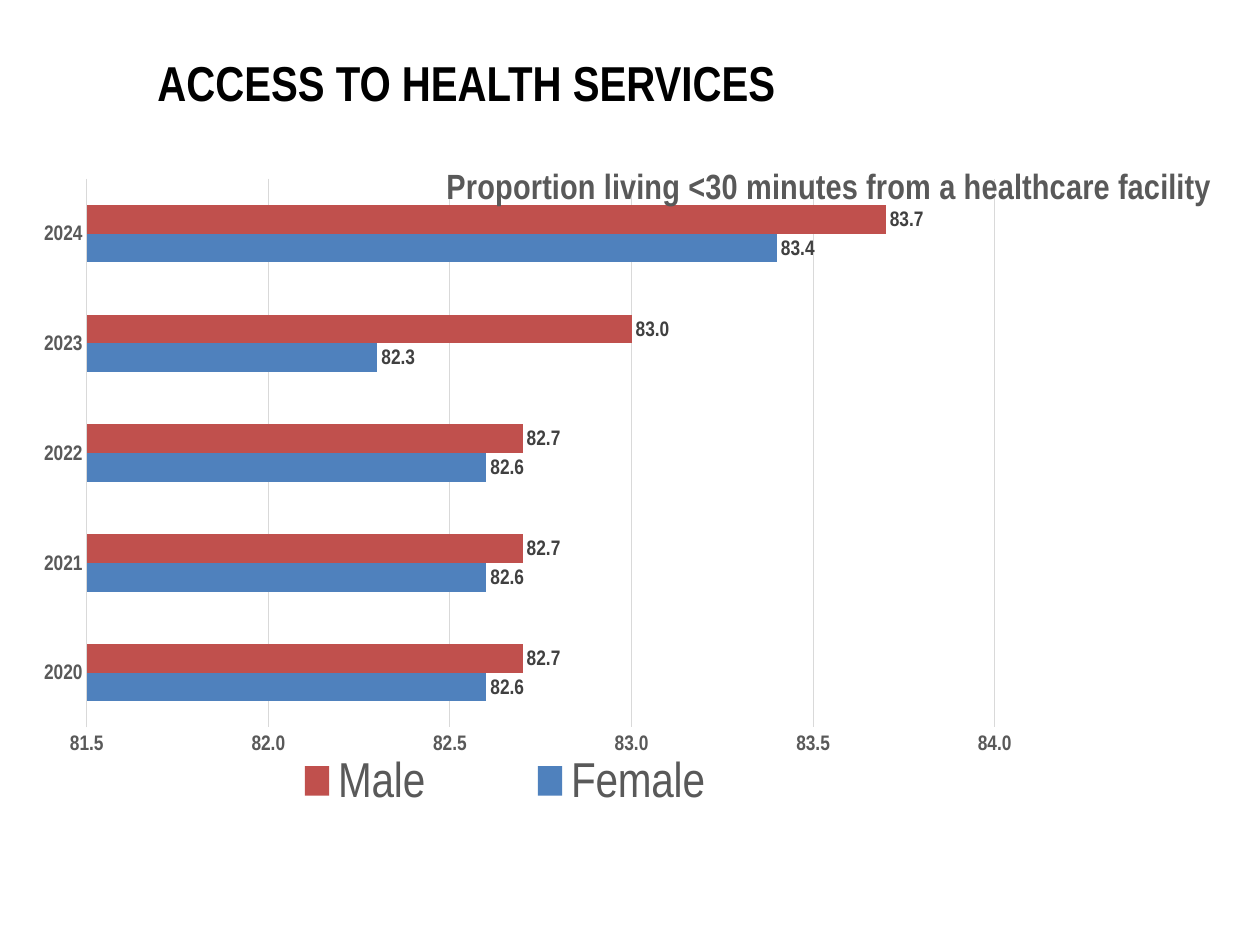
from dataclasses import dataclass

from lxml.etree import SubElement
from pptx import Presentation
from pptx.chart.data import CategoryChartData
from pptx.dml.color import RGBColor
from pptx.enum.chart import XL_CHART_TYPE as ChartType
from pptx.enum.chart import XL_LABEL_POSITION as LabelPosition
from pptx.enum.chart import XL_LEGEND_POSITION as LegendPosition
from pptx.enum.chart import XL_TICK_MARK as TickMark
from pptx.enum.text import MSO_ANCHOR as Anchor
from pptx.oxml.ns import qn
from pptx.util import Pt


@dataclass(frozen=True)
class Theme:
    """Colours, fonts and type sizes of the slide."""

    ink: str = "000000"
    muted: str = "595959"
    label: str = "404040"
    grid: str = "D9D9D9"
    female: str = "4F81BD"
    male: str = "C0504D"
    heading_font: str = "Arial Narrow"
    chart_font: str = "Arial"
    heading_size: int = 28
    chart_title_size: int = 20
    small_size: int = 12


THEME = Theme()
YEARS = ("2020", "2021", "2022", "2023", "2024")
SERIES = {
    "Female": (THEME.female, (82.6, 82.6, 82.6, 82.3, 83.4)),
    "Male": (THEME.male, (82.7, 82.7, 82.7, 83.0, 83.7)),
}


def set_values(target, values):
    """Set each attribute in a dict on the target."""
    for name, value in values.items():
        setattr(target, name, value)


def style_font(font, name, size, color, bold=False):
    """Apply family, size, weight and colour to a font."""
    set_values(font, {"name": name, "size": Pt(size), "bold": bold})
    font.color.rgb = RGBColor.from_string(color)


def set_layout(parent, index, **values):
    """Give a chart part a manual layout at the given child index."""
    for existing in parent.findall(qn("c:layout")):
        parent.remove(existing)
    layout = SubElement(parent, qn("c:layout"))
    parent.insert(index, layout)
    manual = SubElement(layout, qn("c:manualLayout"))
    for name, value in values.items():
        SubElement(manual, qn(f"c:{name}")).set("val", str(value))


def add_heading(slide, box):
    """Place the slide heading in its box."""
    frame = slide.shapes.add_textbox(*map(Pt, box)).text_frame
    set_values(frame, {
        "word_wrap": True,
        "vertical_anchor": Anchor.TOP,
        "margin_left": 0,
        "margin_right": 0,
        "margin_top": 0,
        "margin_bottom": 0,
    })
    run = frame.paragraphs[0].add_run()
    run.text = "ACCESS TO HEALTH SERVICES"
    style_font(run.font, THEME.heading_font, THEME.heading_size, THEME.ink, True)


def style_axes(chart):
    """Format the year axis, the value axis and its gridlines."""
    for axis in (chart.category_axis, chart.value_axis):
        set_values(axis, {"major_tick_mark": TickMark.NONE, "minor_tick_mark": TickMark.NONE})
        style_font(axis.tick_labels.font, THEME.chart_font, THEME.small_size, THEME.muted, True)
    value_axis = chart.value_axis
    set_values(value_axis, {
        "minimum_scale": 81.5,
        "maximum_scale": 84,
        "major_unit": 0.5,
        "has_major_gridlines": True,
    })
    set_values(value_axis.tick_labels, {"number_format": "0.0", "number_format_is_linked": False})
    value_axis.format.line.fill.background()
    for line in (chart.category_axis.format.line, value_axis.major_gridlines.format.line):
        line.width = Pt(0.75)
        line.color.rgb = RGBColor.from_string(THEME.grid)


def style_bars(plot):
    """Colour the bars and label their ends."""
    set_values(plot, {"gap_width": 182, "overlap": 0, "vary_by_categories": False})
    for series in plot.series:
        series.format.fill.solid()
        series.format.fill.fore_color.rgb = RGBColor.from_string(SERIES[series.name][0])
        labels = series.data_labels
        set_values(labels, {
            "show_value": True,
            "position": LabelPosition.OUTSIDE_END,
            "number_format": "0.0",
            "number_format_is_linked": False,
        })
        style_font(labels.font, THEME.chart_font, THEME.small_size, THEME.label, True)


def add_access_chart(slide, box):
    """Place the bar chart of access by year and sex in its box."""
    data = CategoryChartData(number_format="0.0")
    data.categories = YEARS
    for name, (_, values) in SERIES.items():
        data.add_series(name, values)
    chart = slide.shapes.add_chart(ChartType.BAR_CLUSTERED, *map(Pt, box), data).chart
    style_font(chart.font, THEME.chart_font, THEME.small_size, THEME.ink)
    set_values(chart, {"has_title": True, "has_legend": True})
    paragraph = chart.chart_title.text_frame.paragraphs[0]
    run = paragraph.add_run()
    run.text = "Proportion living <30 minutes from a healthcare facility"
    style_font(run.font, THEME.chart_font, THEME.chart_title_size, THEME.muted, True)
    set_values(chart.legend, {"position": LegendPosition.BOTTOM, "include_in_layout": False})
    style_font(chart.legend.font, THEME.chart_font, THEME.heading_size, THEME.muted)
    style_axes(chart)
    style_bars(chart.plots[0])
    root = chart.element.find(qn("c:chart"))
    edges = {"xMode": "edge", "yMode": "edge"}
    set_layout(root.find(qn("c:title")), 1, **edges, x=0.42, y=0.03)
    set_layout(root.find(qn("c:legend")), 1, **edges, x=0.18, y=0.87, w=0.61, h=0.12)
    set_layout(root.find(qn("c:plotArea")), 0, layoutTarget="inner", **edges,
               x=0.059, y=0.061, w=0.925, h=0.792)


def main():
    """Build and save the slide."""
    presentation = Presentation()
    set_values(presentation, {"slide_width": Pt(720), "slide_height": Pt(540)})
    slide = presentation.slides.add_slide(presentation.slide_layouts[6])
    add_heading(slide, (90, 30, 540, 55.5))
    add_access_chart(slide, (16.5, 78, 679, 396))
    presentation.save("out.pptx")


if __name__ == "__main__":
    main()
